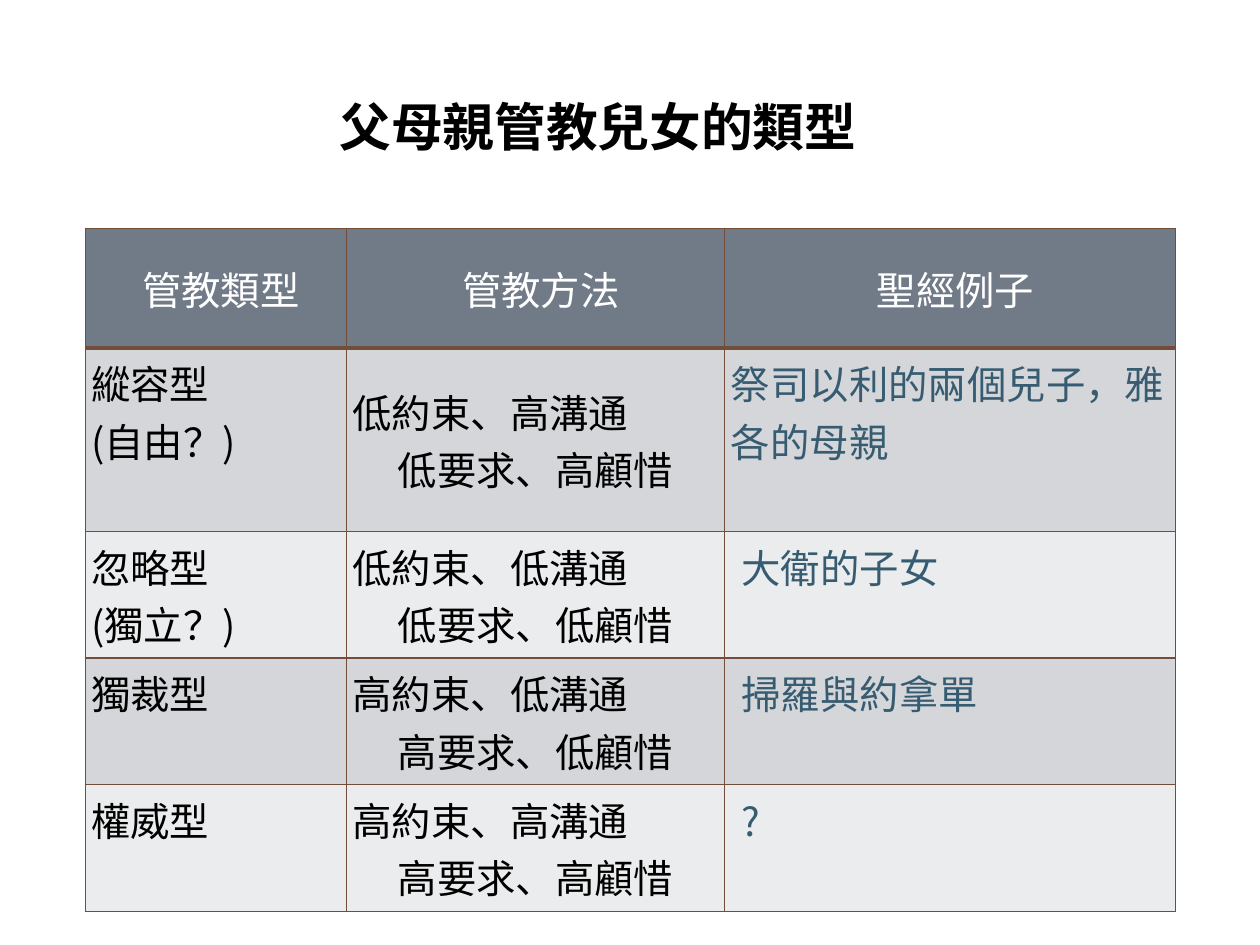
import pptx
import pptx.util
import pptx.dml.color
import pptx.enum.text
import pptx.oxml

Inches = pptx.util.Inches
Pt = pptx.util.Pt
Align = pptx.enum.text.PP_ALIGN
Anchor = pptx.enum.text.MSO_ANCHOR

COLORS = {
    "header": "717A87",
    "odd": "D4D6D9",
    "even": "EBECED",
    "border": "714D3A",
    "white": "FFFFFF",
    "black": "000000",
    "example": "375C71",
}
COLUMN_WIDTHS = [2.95, 4.27, 5.09]
ROW_HEIGHTS = [1.35, 2.07, 1.43, 1.43, 1.43]
HEADINGS = ["管教類型", "管教方法", "聖經例子"]
STYLES = [
    ("縱容型\n(自由？)", "低約束、高溝通\n低要求、高顧惜", "祭司以利的兩個兒子，雅各的母親"),
    ("忽略型\n(獨立？)", "低約束、低溝通\n低要求、低顧惜", "大衛的子女"),
    ("獨裁型", "高約束、低溝通\n高要求、低顧惜", "掃羅與約拿單"),
    ("權威型", "高約束、高溝通\n高要求、高顧惜", "?"),
]


def rgb(name):
    return pptx.dml.color.RGBColor.from_string(COLORS[name])


def add_border(cell, side, points):
    cell._tc.get_or_add_tcPr().append(pptx.oxml.parse_xml(
        f'<a:ln{side} xmlns:a="http://schemas.openxmlformats.org/drawingml/2006/main" '
        f'w="{Pt(points)}"><a:solidFill><a:srgbClr val="{COLORS["border"]}"/>'
        f'</a:solidFill></a:ln{side}>'))


deck = pptx.Presentation()
deck.slide_width = Inches(14.22)
deck.slide_height = Inches(10.67)
slide = deck.slides.add_slide(deck.slide_layouts[5])

title = slide.shapes.title
title.left, title.top = Inches(3.83), Inches(1.07)
title.width, title.height = Inches(6.18), Inches(0.85)
heading = title.text_frame
heading.text = "父母親管教兒女的類型"
heading.auto_size = pptx.enum.text.MSO_AUTO_SIZE.NONE
heading.vertical_anchor = Anchor.TOP
heading.margin_left = heading.margin_right = heading.margin_top = heading.margin_bottom = 0
heading.paragraphs[0].alignment = Align.LEFT
heading_font = heading.paragraphs[0].font
heading_font.name, heading_font.size, heading_font.bold = "Arial", Pt(42), True
heading_font.color.rgb = rgb("black")

parenting = slide.shapes.add_table(
    len(ROW_HEIGHTS), len(COLUMN_WIDTHS), Inches(0.96), Inches(2.58),
    Inches(sum(COLUMN_WIDTHS)), Inches(sum(ROW_HEIGHTS))).table
for column, width in zip(parenting.columns, COLUMN_WIDTHS):
    column.width = Inches(width)
for row, height in zip(parenting.rows, ROW_HEIGHTS):
    row.height = Inches(height)

for r, texts in enumerate([HEADINGS, *STYLES]):
    for c, text in enumerate(texts):
        cell = parenting.cell(r, c)
        for side in "LRTB":
            thick = (r == 0 and side == "B") or (r == 1 and side == "T")
            add_border(cell, side, 3 if thick else 1)
        cell.fill.solid()
        cell.fill.fore_color.rgb = rgb("header" if r == 0 else "odd" if r % 2 else "even")
        cell.margin_left = cell.margin_right = Inches(0.07)
        cell.margin_top = cell.margin_bottom = Inches(0.07)
        cell.vertical_anchor = Anchor.MIDDLE if r == 0 or c == 1 else Anchor.TOP
        cell.text = text
        for line, paragraph in enumerate(cell.text_frame.paragraphs):
            centred = r == 0 or (c == 1 and line == 1)
            paragraph.alignment = Align.CENTER if centred else Align.LEFT
            if r == 0 or (c == 2 and r > 1):
                paragraph._p.get_or_add_pPr().set("indent", str(Inches(0.12)))
            paragraph.font.name = "Noto Sans CJK JP"
            paragraph.font.size = Pt(32)
            paragraph.font.bold = False
            paragraph.font.color.rgb = rgb("white" if r == 0 else "example" if c == 2 else "black")

deck.save("out.pptx")
